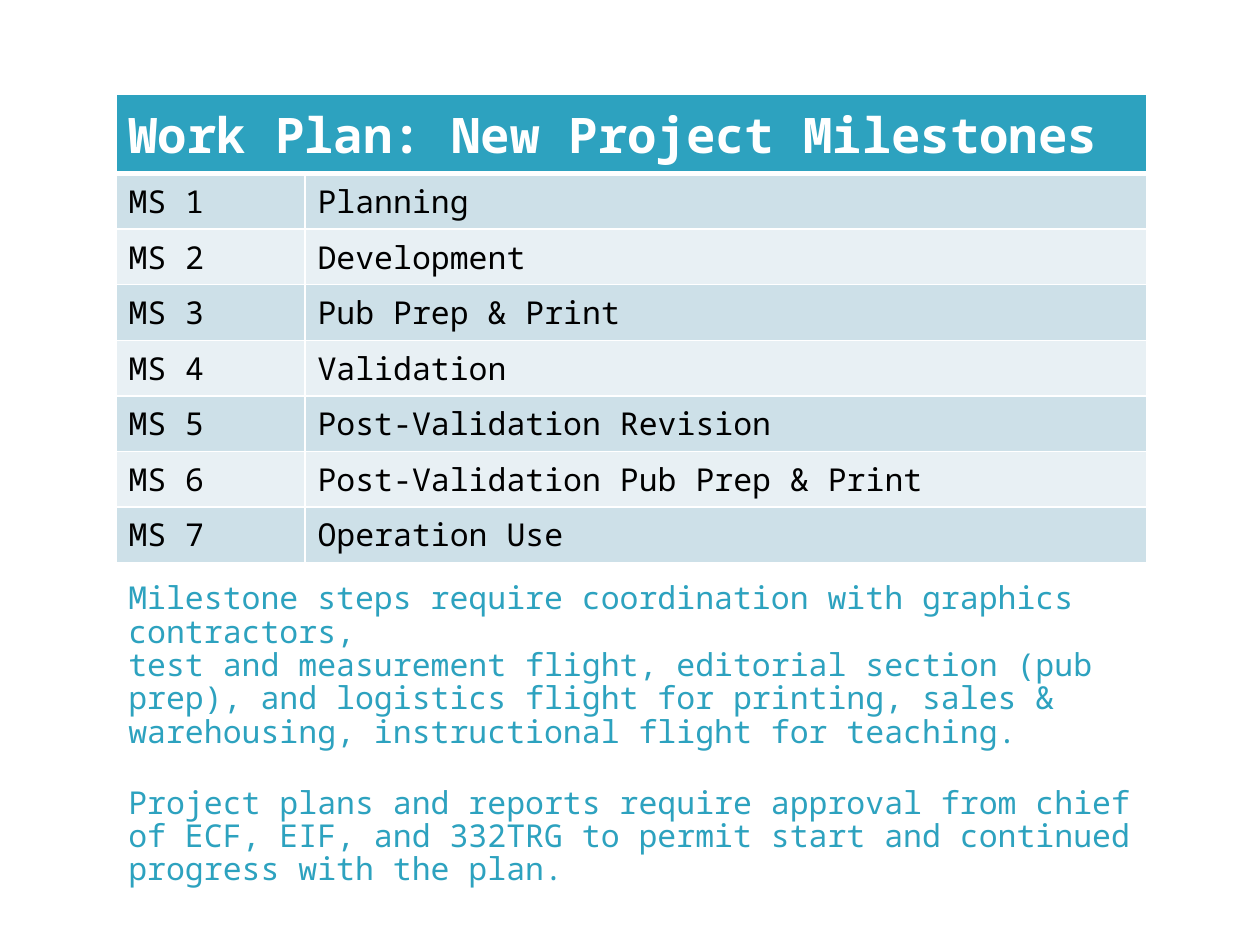
from lxml import etree
from pptx import Presentation, util as u
from pptx.dml.color import RGBColor
from pptx.enum import text
from pptx.oxml.ns import qn

FONT = "Noto Sans Mono"
TEAL, WHITE, BLACK = "2DA2BF", "FFFFFF", "000000"
BANDS = ("CDE0E8", "E8F0F4")
LEFT = 0.92
HEADER_HEIGHT, ROW_HEIGHT = 0.62, 0.44
LABEL_WIDTH = 1.5

HEADING = "Work Plan: New Project Milestones"
MILESTONES = [
    "Planning",
    "Development",
    "Pub Prep & Print",
    "Validation",
    "Post-Validation Revision",
    "Post-Validation Pub Prep & Print",
    "Operation Use",
]
# Each note is a list of paragraphs; a gap separates the notes.
NOTES = [
    [
        "Milestone steps require coordination with graphics contractors,",
        "test and measurement flight, editorial section (pub prep), and logistics "
        "flight for printing, sales & warehousing, instructional flight for teaching.",
    ],
    [
        "Project plans and reports require approval from chief of ECF, EIF, and "
        "332TRG to permit start and continued progress with the plan.",
    ],
]


def color(value):
    return RGBColor.from_string(value)


def add_run(paragraph, words, size, ink, bold=False):
    run = paragraph.add_run()
    run.text = words
    run.font.name = FONT
    run.font.size = u.Pt(size)
    run.font.bold = bold
    run.font.color.rgb = color(ink)


def set_borders(cell, bottom=1):
    """Draw white cell borders; they must precede the fill in the XML."""
    properties = cell._tc.get_or_add_tcPr()
    for index, (side, width) in enumerate(
        [("lnL", 1), ("lnR", 1), ("lnT", 1), ("lnB", bottom)]
    ):
        line = etree.Element(qn(f"a:{side}"), w=str(u.Pt(width)))
        fill = etree.SubElement(line, qn("a:solidFill"))
        etree.SubElement(fill, qn("a:srgbClr"), val=WHITE)
        properties.insert(index, line)


def fill_cell(cell, words, fill, size=18, ink=BLACK, bold=False, bottom=1):
    cell.fill.solid()
    cell.fill.fore_color.rgb = color(fill)
    set_borders(cell, bottom)
    if words:
        add_run(cell.text_frame.paragraphs[0], words, size, ink, bold)


def add_milestone_table(slide, left, top, width):
    height = HEADER_HEIGHT + ROW_HEIGHT * len(MILESTONES)
    table = slide.shapes.add_table(
        len(MILESTONES) + 1, 2, *map(u.Inches, (left, top, width, height))
    ).table
    table.columns[0].width = u.Inches(LABEL_WIDTH)
    table.columns[1].width = u.Inches(width - LABEL_WIDTH)
    for index, row in enumerate(table.rows):
        row.height = u.Inches(ROW_HEIGHT if index else HEADER_HEIGHT)

    table.cell(0, 0).merge(table.cell(0, 1))
    for column, words in enumerate((HEADING, "")):
        fill_cell(table.cell(0, column), words, TEAL, 28, WHITE, True, bottom=3)
    for number, milestone in enumerate(MILESTONES, 1):
        band = BANDS[(number - 1) % 2]
        for column, words in enumerate((f"MS {number}", milestone)):
            fill_cell(table.cell(number, column), words, band)


def add_notes(slide, left, top, width, height):
    box = slide.shapes.add_textbox(*map(u.Inches, (left, top, width, height)))
    frame = box.text_frame
    frame.word_wrap = True
    frame.auto_size = text.MSO_AUTO_SIZE.NONE
    frame.vertical_anchor = text.MSO_ANCHOR.TOP
    paragraph = frame.paragraphs[0]
    for note_index, note in enumerate(NOTES):
        for line_index, words in enumerate(note):
            if note_index or line_index:
                paragraph = frame.add_paragraph()
            paragraph.line_spacing = 0.88
            if note_index and not line_index:
                paragraph.space_before = u.Pt(21.6)
            add_run(paragraph, words, 18, TEAL)


def main():
    presentation = Presentation()
    presentation.slide_width, presentation.slide_height = u.Inches(10), u.Inches(7.5)
    slide = presentation.slides.add_slide(presentation.slide_layouts[6])
    add_notes(slide, LEFT, 4.58, 8.5, 2.25)
    add_milestone_table(slide, LEFT, 0.75, 8.18)
    presentation.save("out.pptx")


if __name__ == "__main__":
    main()
